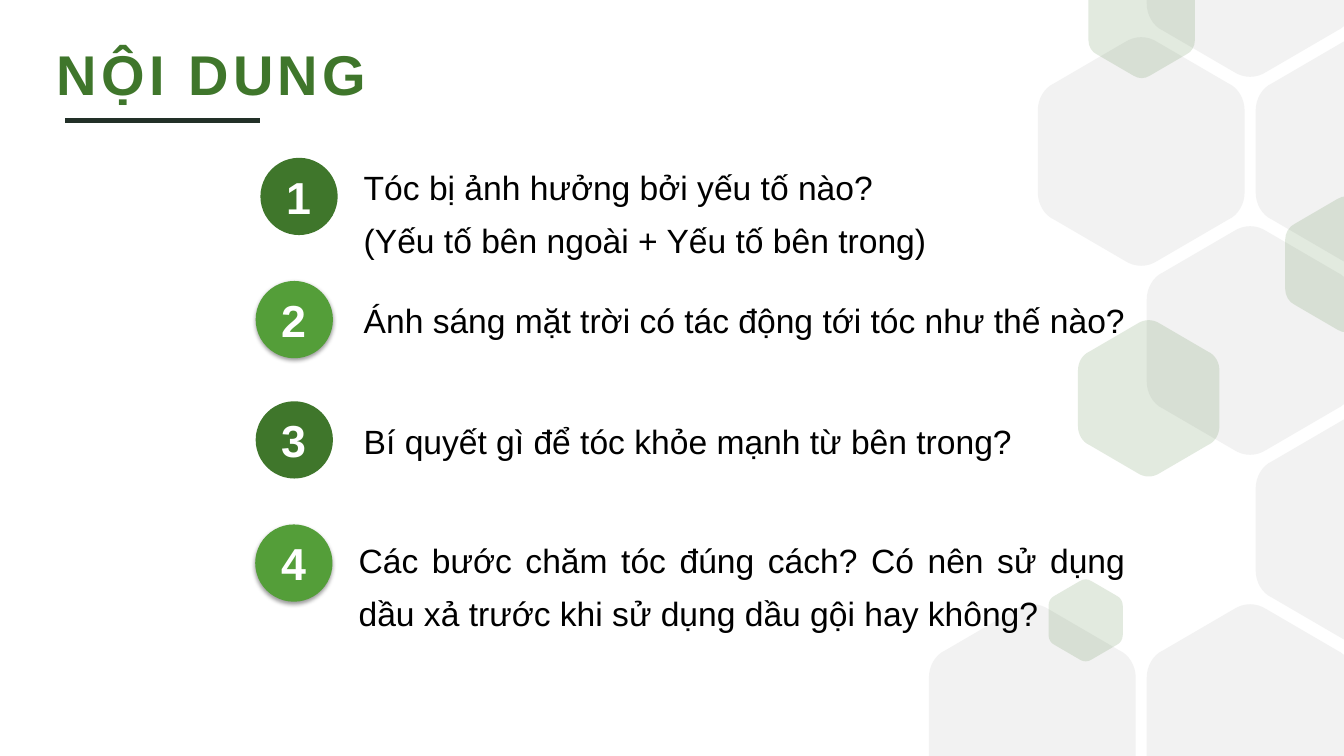
"""Build the contents slide: a title and four numbered questions on a honeycomb."""
import pptx
import pptx.dml.color
import pptx.enum.shapes
import pptx.enum.text
import pptx.util
import lxml.etree

Pt = pptx.util.Pt
RGB = pptx.dml.color.RGBColor.from_string
TEXT = pptx.enum.text
NS = "http://schemas.openxmlformats.org/drawingml/2006/main"
HUES = {"dark": "3F762B", "light": "549E39", "grey": "F2F2F2",
        "rule": "223028", "ink": "000000", "white": "FFFFFF"}


def add_tag(node, name, **attrs):
    """Append a drawing element and return it."""
    return lxml.etree.SubElement(node, f"{{{NS}}}{name}", attrs)


def style(para, hue, form):
    """Apply font values and a colour to a paragraph's runs."""
    for run in para.runs:
        run.font.name = "Arial"
        run.font.color.rgb = RGB(HUES[hue])
        for key, value in form.items():
            setattr(run.font, key, value)


deck = pptx.Presentation()
deck.slide_width, deck.slide_height = Pt(960), Pt(540)
slide = deck.slides.add_slide(deck.slide_layouts[5])
shapes = slide.shapes

right = [(0.5, -0.18), (0.5, -0.23), (0.47, -0.28), (0.42, -0.3)]
peak = [(0.08, -0.48), (0.03, -0.51), (-0.03, -0.51), (-0.08, -0.48)]
upper = right + peak + [(-u, v) for u, v in right[::-1]]
lower = [(-u, -v) for u, v in upper]

grid = [(0, 4), (2, 4), (3, 1), (2, 0), (2, 2), (1, 1), (3, 3)]
cells = [(663.5 + 77.8 * col, 135 * row - 108, 147.7, "grey") for col, row in grid]
cells += [(918, 140.4, 88, "dark"), (749, 414, 53, "dark"),
          (777.5, -28, 76, "dark"), (770, 229, 101, "dark")]
for left, top, width, hue in cells:
    tall = width * 1.1
    mid = top + tall / 2
    ring, first = upper + lower, 0
    if top < 0:
        cut = -mid / tall
        ring, first = [(-0.5, cut)] + lower + [(0.5, cut)], 1
    elif top + tall > 540:
        cut = (540 - mid) / tall
        ring, first = [(0.5, cut)] + upper + [(-0.5, cut)], 1
    dots = [(Pt(left + (u + 0.5) * width), Pt(mid + v * tall)) for u, v in ring]
    form = shapes.build_freeform(*dots[0], scale=1.0)
    form.add_line_segments(dots[1:], close=True)
    cell = form.convert_to_shape()
    track = cell._element.find(f".//{{{NS}}}path")
    nodes = list(track)
    for start in range(first, len(ring) - first, 4):
        curve = add_tag(track, "cubicBezTo")
        nodes[start + 1].addprevious(curve)
        for node in nodes[start + 1:start + 4]:
            curve.append(node[0])
            track.remove(node)
    cell.shadow.inherit = False
    cell.line.fill.background()
    cell.fill.solid()
    cell.fill.fore_color.rgb = RGB(HUES[hue])
    if hue == "dark":
        tint = cell._element.spPr.find(f".//{{{NS}}}srgbClr")
        add_tag(tint, "alpha", val="15000")

title = shapes.title
spot = {"left": Pt(33.5), "top": Pt(24.5), "width": Pt(621), "height": Pt(55.5)}
for key, value in spot.items():
    setattr(title, key, value)
frame = title.text_frame
frame.text = "NỘI DUNG"
frame.word_wrap = True
frame.auto_size = TEXT.MSO_AUTO_SIZE.NONE
frame.vertical_anchor = TEXT.MSO_ANCHOR.TOP
head = frame.paragraphs[0]
head.alignment = TEXT.PP_ALIGN.LEFT
style(head, "dark", {"size": Pt(40), "bold": True})
head.runs[0]._r.get_or_add_rPr().set("spc", "300")

rule = shapes.add_connector(pptx.enum.shapes.MSO_CONNECTOR.STRAIGHT,
                            Pt(46.5), Pt(86.1), Pt(186), Pt(86.1))
rule.line.color.rgb = RGB(HUES["rule"])
rule.line.width = Pt(3)
add_tag(rule._element.spPr, "effectLst")

items = [
    ((186, 112.7), (252.7, 113, 633, 75), 1.1,
     ["Tóc bị ảnh hưởng bởi yếu tố nào?", "(Yếu tố bên ngoài + Yếu tố bên trong)"]),
    ((182.6, 200.7), (252.7, 211, 633, 36), 1.0,
     ["Ánh sáng mặt trời có tác động tới tóc như thế nào?"]),
    ((182.6, 286.6), (252.7, 297.4, 633, 36), 1.0,
     ["Bí quyết gì để tóc khỏe mạnh từ bên trong?"]),
    ((182.3, 374.6), (249.1, 373.7, 561.6, 83), 1.3,
     ["Các bước chăm tóc đúng cách? Có nên sử dụng "
      "dầu xả trước khi sử dụng dầu gội hay không?"]),
]
for num, (place, area, lead, lines) in enumerate(items, 1):
    disc = shapes.add_shape(pptx.enum.shapes.MSO_SHAPE.OVAL,
                            *map(Pt, place), Pt(55.2), Pt(55.2))
    disc.fill.solid()
    disc.fill.fore_color.rgb = RGB(HUES["dark" if num % 2 else "light"])
    disc.line.fill.background()
    disc.shadow.inherit = False
    if num % 2 == 0:
        glow = add_tag(disc._element.spPr.find(f"{{{NS}}}effectLst"), "outerShdw",
                       blurRad=str(Pt(3.1)), dist=str(Pt(1.6)), dir="5400000",
                       algn="ctr", rotWithShape="0")
        add_tag(add_tag(glow, "srgbClr", val=HUES["ink"]), "alpha", val="38000")
    frame = disc.text_frame
    for side in ("left", "top", "right", "bottom"):
        setattr(frame, f"margin_{side}", 0)
    frame.vertical_anchor = TEXT.MSO_ANCHOR.MIDDLE
    frame.text = str(num)
    frame.paragraphs[0].alignment = TEXT.PP_ALIGN.CENTER
    style(frame.paragraphs[0], "white", {"size": Pt(32), "bold": True})

    frame = shapes.add_textbox(*map(Pt, area)).text_frame
    frame.word_wrap = True
    frame.text = "\n".join(lines)
    for row, para in enumerate(frame.paragraphs):
        para.alignment = TEXT.PP_ALIGN.JUSTIFY
        para.line_spacing = lead
        if len(lines) > 1:
            para.space_before = Pt(3 if row else 0)
            para.space_after = Pt(3)
        style(para, "ink", {"size": Pt(24)})

deck.save("out.pptx")
